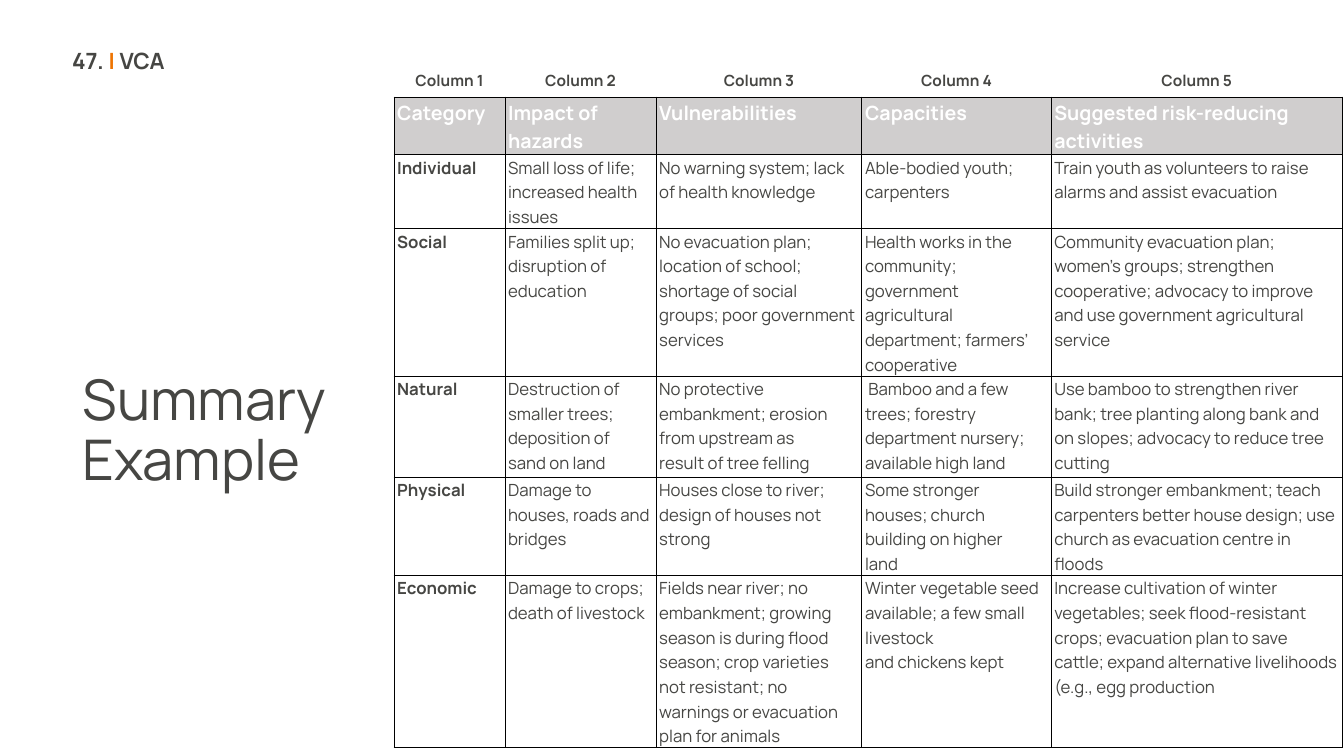
from pptx import Presentation
from pptx.util import Pt
from pptx.dml.color import RGBColor as RGB
from pptx.enum.text import PP_ALIGN as Align, MSO_ANCHOR as Anchor, MSO_AUTO_SIZE as Fit
from pptx.oxml import parse_xml
from pptx.oxml.ns import nsdecls

# Content
TITLE = "Summary Example"
TAG = [("47. ", "ink"), ("| ", "orange"), ("VCA", "ink")]
HEADS = ["Category", "Impact of hazards", "Vulnerabilities", "Capacities",
         "Suggested risk-reducing activities"]
BODY = [
    ["Individual",
     "Small loss of life; increased health issues",
     "No warning system; lack of health knowledge",
     "Able-bodied youth; carpenters",
     "Train youth as volunteers to raise alarms and assist evacuation"],
    ["Social",
     "Families split up; disruption of education",
     "No evacuation plan; location of school; shortage of social groups; "
     "poor government services",
     "Health works in the community; government agricultural department; "
     "farmers’ cooperative",
     "Community evacuation plan; women’s groups; strengthen cooperative; "
     "advocacy to improve and use government agricultural service"],
    ["Natural",
     "Destruction of smaller trees; deposition of \vsand on land",
     "No protective \vembankment; erosion from upstream as \vresult of tree felling",
     " Bamboo and a few trees; forestry \vdepartment nursery; available high land",
     "Use bamboo to strengthen river \vbank; tree planting along bank and on slopes; "
     "advocacy to reduce tree cutting"],
    ["Physical",
     "Damage to \vhouses, roads and bridges",
     "Houses close to river; design of houses not \vstrong",
     "Some stronger \vhouses; church building on higher \vland",
     "Build stronger embankment; teach carpenters better house design; "
     "use church as evacuation centre in floods"],
    ["Economic",
     "Damage to crops; death of livestock",
     "Fields near river; no embankment; growing season is during flood season; "
     "crop varieties not resistant; no warnings or evacuation plan for animals",
     "Winter vegetable seed available; a few small livestock \vand chickens kept",
     "Increase cultivation of winter vegetables; seek flood-resistant crops; "
     "evacuation plan to save cattle; expand alternative livelihoods "
     "(e.g., egg production"],
]
ROWS = [[f"Column {n}" for n in range(1, 6)], HEADS] + BODY

# Look
FONT = "Manrope"
HEX = {"ink": "464643", "orange": "EE7402", "white": "FFFFFF",
       "grey": "D0CECE", "black": "000000"}
WIDTHS = [79.2, 108, 147, 135.2, 208]
HEIGHTS = [20.4, 24, 42, 99, 72, 65, 96.5]


def style(run, size, color, bold=False):
    font = run.font
    font.name, font.size, font.bold = FONT, Pt(size), bold
    font.color.rgb = RGB.from_string(HEX[color])


def border(cell, side, color, width):
    cell._tc.get_or_add_tcPr().append(parse_xml(
        f'<a:ln{side} {nsdecls("a")} w="{Pt(width)}"><a:solidFill>'
        f'<a:srgbClr val="{HEX[color]}"/></a:solidFill></a:ln{side}>'))


prs = Presentation()
prs.slide_width, prs.slide_height = Pt(960), Pt(540)
slide = prs.slides.add_slide(prs.slide_layouts[5])

# Title
title = slide.shapes.title
title.left, title.top, title.width, title.height = Pt(51.8), Pt(262), Pt(240.5), Pt(129.6)
frame = title.text_frame
frame.text = TITLE
frame.word_wrap, frame.auto_size = True, Fit.NONE
frame.vertical_anchor = Anchor.TOP
para = frame.paragraphs[0]
para.alignment, para.line_spacing = Align.LEFT, 0.9
style(para.runs[0], 40, "ink")

# Table
shape = slide.shapes.add_table(len(ROWS), len(WIDTHS), Pt(281.5), Pt(49),
                               Pt(sum(WIDTHS)), Pt(sum(HEIGHTS)))
table = shape.table
table.first_row = table.horz_banding = False
for col, width in zip(table.columns, WIDTHS):
    col.width = Pt(width)
for row, height in zip(table.rows, HEIGHTS):
    row.height = Pt(height)

for r, texts in enumerate(ROWS):
    size, color = {0: (11, "ink"), 1: (14, "white")}.get(r, (12, "ink"))
    for c, text in enumerate(texts):
        cell = table.cell(r, c)
        cell.margin_left = cell.margin_right = Pt(2.2)
        cell.margin_top = cell.margin_bottom = Pt(0)
        for side in "LRTB":
            if r == 0 and side != "B":
                border(cell, side, "white", 1)
            else:
                border(cell, side, "black", 0.75)
        if r == 1:
            cell.fill.solid()
            cell.fill.fore_color.rgb = RGB.from_string(HEX["grey"])
        else:
            cell.fill.background()
        para = cell.text_frame.paragraphs[0]
        para.text = text
        para.line_spacing, para.space_after = 1.07, Pt(8)
        para.alignment = Align.CENTER if r == 0 else Align.LEFT
        for run in para.runs:
            style(run, size, color, r < 2 or c == 0)

# Page tag
box = slide.shapes.add_textbox(Pt(22), Pt(32.4), Pt(102.6), Pt(78.5))
box.text_frame.word_wrap = True
para = box.text_frame.paragraphs[0]
para.alignment, para.line_spacing = Align.RIGHT, 0.9
for text, color in TAG:
    run = para.add_run()
    run.text = text
    style(run, 16, color, True)

prs.save("out.pptx")
